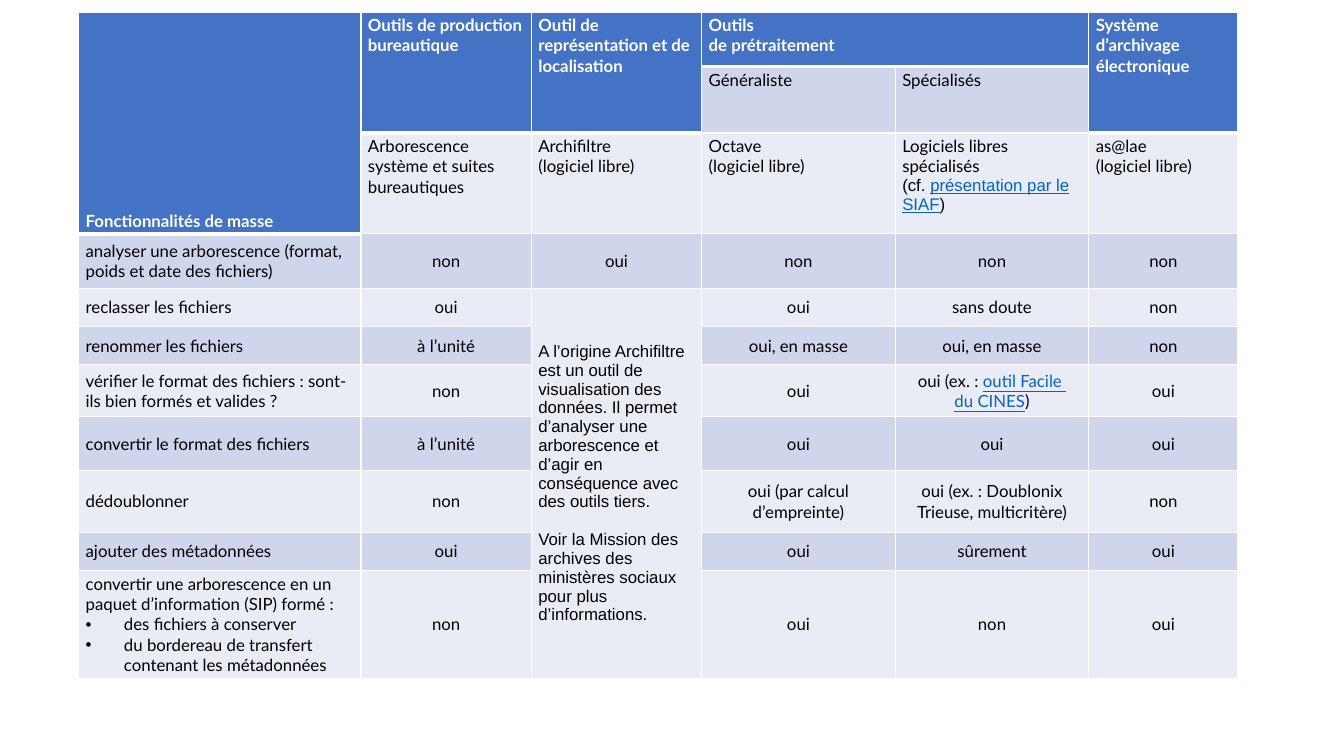
"""Build the slide comparing archive tools by bulk-processing feature."""
import pptx
import pptx.dml.color
import pptx.enum.text
import pptx.oxml
import pptx.oxml.ns
import pptx.util

Inches = pptx.util.Inches
Pt = pptx.util.Pt
ANCHOR = pptx.enum.text.MSO_ANCHOR
ALIGN = pptx.enum.text.PP_ALIGN
NAMESPACE = pptx.oxml.ns.nsdecls("a")

COLUMN_WIDTHS = [2.8, 1.69, 1.69, 1.92, 1.92, 1.48]
ROW_HEIGHTS = [0.54, 0.66, 1, 0.54, 0.38, 0.38, 0.51, 0.54, 0.61, 0.38, 1.07]
MERGES = [(0, 0, 2, 0), (0, 1, 1, 1), (0, 2, 1, 2), (0, 3, 0, 4), (0, 5, 1, 5), (4, 2, 10, 2)]
HEADER_ROWS = 3
ARCHIFILTRE = (
    "A l’origine Archifiltre est un outil de visualisation des données. Il permet d’analyser une "
    "arborescence et d’agir en conséquence avec des outils tiers.\n"
    "Voir la Mission des archives des ministères sociaux pour plus d’informations."
)
FEATURES = [
    ["Fonctionnalités de masse", "Outils de production bureautique",
     "Outil de représentation et de localisation", "Outils\nde prétraitement", "",
     "Système d’archivage électronique"],
    ["", "", "", "Généraliste", "Spécialisés", ""],
    ["", "Arborescence système et suites bureautiques", "Archifiltre\n(logiciel libre)",
     "Octave\n(logiciel libre)",
     "Logiciels libres spécialisés\n(cf. [présentation par le SIAF])",
     "as@lae\n(logiciel libre)"],
    ["analyser une arborescence (format, poids et date des fichiers)",
     "non", "oui", "non", "non", "non"],
    ["reclasser les fichiers", "oui", ARCHIFILTRE, "oui", "sans doute", "non"],
    ["renommer les fichiers", "à l’unité", "", "oui, en masse", "oui, en masse", "non"],
    ["vérifier le format des fichiers : sont-ils bien formés et valides ?",
     "non", "", "oui", "oui (ex. : [outil Facile ]\n[du CINES])", "oui"],
    ["convertir le format des fichiers", "à l’unité", "", "oui", "oui", "oui"],
    ["dédoublonner", "non", "", "oui (par calcul d’empreinte)",
     "oui (ex. : Doublonix Trieuse, multicritère)", "non"],
    ["ajouter des métadonnées", "oui", "", "oui", "sûrement", "oui"],
    ["convertir une arborescence en un paquet d’information (SIP) formé :\n"
     "• des fichiers à conserver\n• du bordereau de transfert contenant les métadonnées",
     "non", "", "oui", "non", "oui"],
]


def rgb(code):
    return pptx.dml.color.RGBColor.from_string(code)


def set_formats(target, formats):
    for attribute, value in formats.items():
        setattr(target, attribute, value)


class Board:
    header, band, light, line = "4472C4", "CFD5EA", "E9EBF5", "FFFFFF"
    ink, link = "000000", "0563C1"
    text = {"name": "Lato", "size": Pt(12), "bold": False}
    margins = {"margin_left": Inches(0.07), "margin_right": Inches(0.07),
               "margin_top": Inches(0.03), "margin_bottom": Inches(0.03)}

    def __init__(self, slide):
        self.slide = slide

    def grid(self, left, top, widths, heights, merges):
        frame = self.slide.shapes.add_table(
            len(heights), len(widths), Inches(left), Inches(top),
            Inches(sum(widths)), Inches(sum(heights)))
        table = frame.table
        set_formats(table, {"first_row": False, "horz_banding": False})
        for column, width in zip(table.columns, widths):
            column.width = Inches(width)
        for row, height in zip(table.rows, heights):
            row.height = Inches(height)
        for top_row, left_column, bottom_row, right_column in merges:
            table.cell(top_row, left_column).merge(table.cell(bottom_row, right_column))
        return table

    def cell(self, cell, fill, anchor):
        set_formats(cell, {**self.margins, "vertical_anchor": anchor})
        properties = cell._tc.get_or_add_tcPr()
        for side in "LRTB":
            points = 3 if side == "B" and fill == self.header else 1
            properties.append(pptx.oxml.parse_xml(
                f'<a:ln{side} {NAMESPACE} w="{Pt(points)}"><a:solidFill>'
                f'<a:srgbClr val="{self.line}"/></a:solidFill></a:ln{side}>'))
        cell.fill.solid()
        cell.fill.fore_color.rgb = rgb(fill)

    def wording(self, cell, content, color, formats, align):
        for index, line in enumerate(content.split("\n")):
            frame = cell.text_frame
            paragraph = frame.add_paragraph() if index else frame.paragraphs[0]
            paragraph.alignment = align
            if line.startswith("• "):
                self.bullet(paragraph)
                line = line[2:]
            for part, words in enumerate(line.replace("]", "[").split("[")):
                if not words:
                    continue
                linked = part % 2 == 1
                run = paragraph.add_run()
                run.text = words
                set_formats(run.font, {**self.text, **formats, "underline": linked})
                run.font.color.rgb = rgb(self.link if linked else color)

    def bullet(self, paragraph):
        properties = paragraph._p.get_or_add_pPr()
        properties.set("marL", str(Inches(0.38)))
        properties.set("indent", str(Inches(-0.38)))
        for element in (f'<a:buFont {NAMESPACE} typeface="Arial"/>',
                        f'<a:buChar {NAMESPACE} char="•"/>',
                        f'<a:tabLst {NAMESPACE}><a:tab pos="{Inches(0.5)}" algn="l"/></a:tabLst>'):
            properties.append(pptx.oxml.parse_xml(element))

    def typeface(self, paragraph, name):
        for run in paragraph.runs:
            run.font.name = name


def main():
    presentation = pptx.Presentation()
    set_formats(presentation, {"slide_width": Inches(13.33), "slide_height": Inches(7.5)})
    board = Board(presentation.slides.add_slide(presentation.slide_layouts[6]))
    comparison = board.grid(0.78, 0.12, COLUMN_WIDTHS, ROW_HEIGHTS, MERGES)

    for row, entries in enumerate(FEATURES):
        for column, content in enumerate(entries):
            heading = row == 0 or (row < HEADER_ROWS and column == 0)
            answer = row >= HEADER_ROWS and column > 0 and content != ARCHIFILTRE
            fill = board.header if heading else board.band if row % 2 else board.light
            anchor = ANCHOR.MIDDLE if row >= HEADER_ROWS else ANCHOR.TOP
            if heading and column == 0:
                anchor = ANCHOR.BOTTOM
            cell = comparison.cell(row, column)
            board.cell(cell, fill, anchor)
            if content:
                board.wording(cell, content, board.line if heading else board.ink,
                              {"bold": heading}, ALIGN.CENTER if answer else ALIGN.LEFT)

    archifiltre_note = comparison.cell(4, 2).text_frame.paragraphs
    archifiltre_note[1].space_before = Pt(13.5)
    siaf_reference = comparison.cell(2, 4).text_frame.paragraphs[1]
    for paragraph in (*archifiltre_note, siaf_reference):
        board.typeface(paragraph, "Arial")
    presentation.save("out.pptx")


if __name__ == "__main__":
    main()
